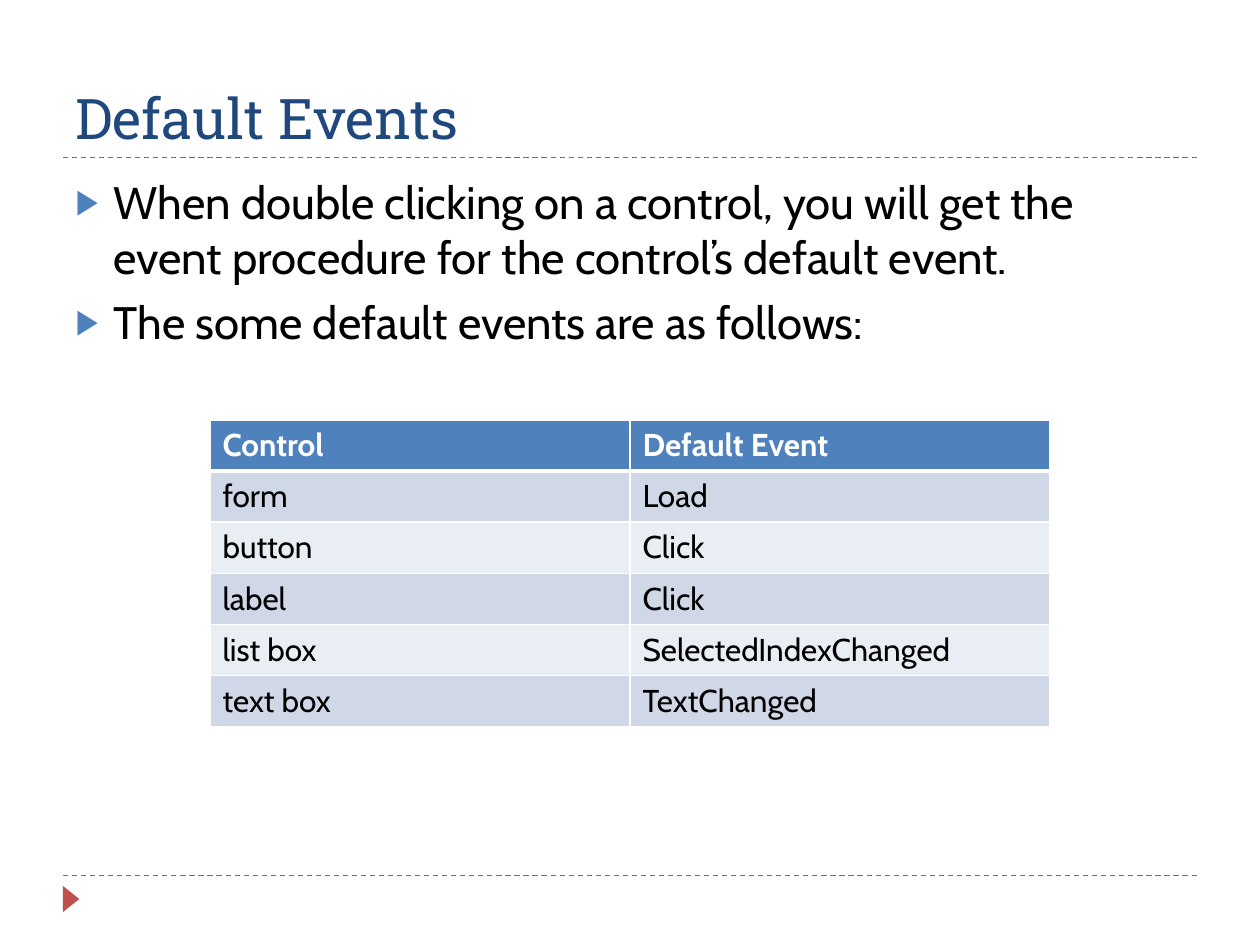
from collections import namedtuple

from lxml import etree
from pptx import Presentation
from pptx.dml.color import RGBColor
from pptx.enum.dml import MSO_LINE
from pptx.enum.shapes import MSO_CONNECTOR, MSO_SHAPE
from pptx.enum.text import MSO_ANCHOR, MSO_AUTO_SIZE, PP_ALIGN
from pptx.oxml.ns import qn
from pptx.util import Pt

STRAIGHT = MSO_CONNECTOR.STRAIGHT
TRIANGLE = MSO_SHAPE.ISOSCELES_TRIANGLE
DASH = MSO_LINE.DASH
BOTTOM = MSO_ANCHOR.BOTTOM
TOP = MSO_ANCHOR.TOP
LEFT = PP_ALIGN.LEFT
NO_FIT = MSO_AUTO_SIZE.NONE

RED, BLUE, NAVY = "C0504D", "4F81BD", "1F497D"
WHITE, BLACK = "FFFFFF", "000000"
BANDS = ("D0D8E8", "E9EDF4")

Box = namedtuple("Box", "left top width height")

BULLETS = (
    "When double clicking on a control, you will get the event procedure "
    "for the control’s default event.",
    "The some default events are as follows:",
)
EVENTS = (
    ("Control", "Default Event"),
    ("form", "Load"),
    ("button", "Click"),
    ("label", "Click"),
    ("list box", "SelectedIndexChanged"),
    ("text box", "TextChanged"),
)


def color(value):
    """Return the RGB colour for a hex string."""
    return RGBColor.from_string(value)


def add_child(parent, tag, **attributes):
    """Append a drawing element with the given attributes."""
    return etree.SubElement(parent, qn(tag), attributes)


def write(para, text, size=18, font="Cabin", ink=BLACK, bold=False):
    """Add formatted text to a left-aligned paragraph."""
    para.alignment = LEFT
    span = para.add_run()
    span.text = text
    span.font.size = Pt(size)
    span.font.name = font
    span.font.bold = bold
    span.font.color.rgb = color(ink)


def place_text(holder, box, anchor):
    """Move a placeholder to its box and return its text frame."""
    holder.left, holder.top, holder.width, holder.height = map(Pt, box)
    frame = holder.text_frame
    frame.word_wrap = True
    frame.auto_size = NO_FIT
    frame.vertical_anchor = anchor
    return frame


def add_title(page, box, text):
    """Fill the title placeholder."""
    frame = place_text(page.shapes.title, box, BOTTOM)
    write(frame.paragraphs[0], text, size=32, font="Roboto Slab", ink=NAVY)


def add_bullets(page, box, lines):
    """Fill the body placeholder with a bulleted list."""
    frame = place_text(page.placeholders[1], box, TOP)
    for index, line in enumerate(lines):
        para = frame.add_paragraph() if index else frame.paragraphs[0]
        write(para, line, size=26)
        para.space_before = Pt(6)
        settings = para._p.get_or_add_pPr()
        settings.set("marL", str(Pt(21.6)))
        settings.set("indent", str(Pt(-21.6)))
        add_child(add_child(settings, "a:buClr"), "a:srgbClr", val=BLUE)
        add_child(settings, "a:buSzPct", val="76000")
        add_child(settings, "a:buChar", char="▶")


def add_rule(page, box):
    """Draw a dashed rule along the top of the box."""
    right = box.left + box.width
    rule = page.shapes.add_connector(
        STRAIGHT, Pt(box.left), Pt(box.top), Pt(right), Pt(box.top))
    rule.line.color.rgb = color(RED)
    rule.line.width = Pt(0.75)
    rule.line.dash_style = DASH
    add_child(rule._element.spPr, "a:effectLst")


def add_footer(page, box):
    """Draw the footer rule with a right-pointing marker below it."""
    add_rule(page, box)
    marker = page.shapes.add_shape(
        TRIANGLE, Pt(box.left - 2.9), Pt(box.top + 8.6), Pt(15), Pt(9.4))
    marker.rotation = 90
    marker.shadow.inherit = False
    marker.fill.solid()
    marker.fill.fore_color.rgb = color(RED)
    marker.line.fill.background()


def set_borders(cell, top, bottom):
    """Give a cell white borders, with its own top and bottom widths."""
    settings = cell._tc.get_or_add_tcPr()
    widths = {"a:lnL": 1, "a:lnR": 1, "a:lnT": top, "a:lnB": bottom}
    for index, (tag, width) in enumerate(widths.items()):
        border = add_child(settings, tag, w=str(Pt(width)))
        add_child(add_child(border, "a:solidFill"), "a:srgbClr", val=WHITE)
        settings.insert(index, border)


def add_events_table(page, box, rows):
    """Build the banded table of controls and their default events."""
    columns = len(rows[0])
    table = page.shapes.add_table(len(rows), columns, *map(Pt, box)).table
    for column in table.columns:
        column.width = Pt(box.width / columns)
    for r, values in enumerate(rows):
        table.rows[r].height = Pt(box.height / len(rows))
        header = r == 0
        for c, value in enumerate(values):
            cell = table.cell(r, c)
            cell.fill.solid()
            cell.fill.fore_color.rgb = color(BLUE if header else BANDS[(r - 1) % 2])
            set_borders(cell, top=3 if r == 1 else 1, bottom=3 if header else 1)
            write(cell.text_frame.paragraphs[0], value,
                  ink=WHITE if header else BLACK, bold=header)


def main():
    """Build and save the deck."""
    deck = Presentation()
    deck.slide_width, deck.slide_height = Pt(720), Pt(540)
    page = deck.slides.add_slide(deck.slide_layouts[1])
    add_footer(page, Box(36, 500.4, 648, 30))
    add_rule(page, Box(36, 90, 648, 0))
    add_title(page, Box(36, 12, 648, 78), "Default Events")
    add_bullets(page, Box(36, 96, 648, 388.8), BULLETS)
    add_events_table(page, Box(120, 240, 480, 175.2), EVENTS)
    deck.save("out.pptx")


if __name__ == "__main__":
    main()
